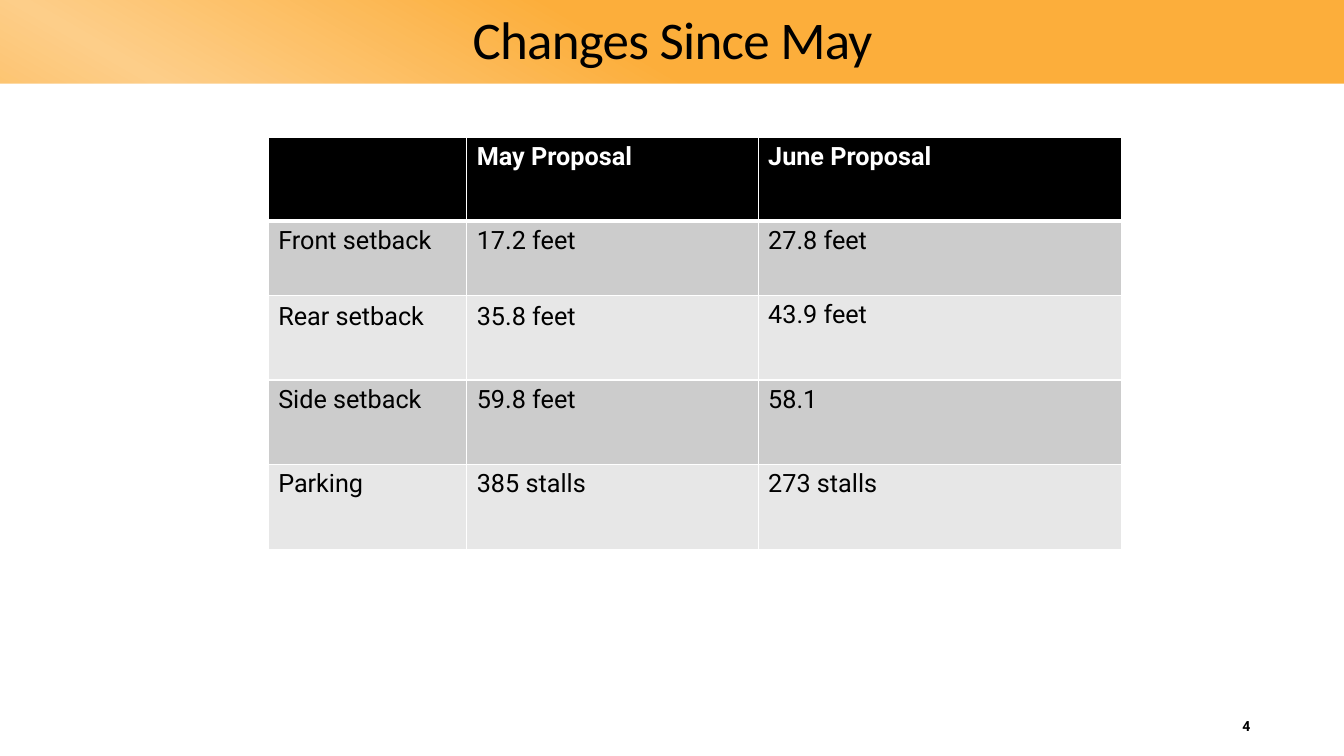
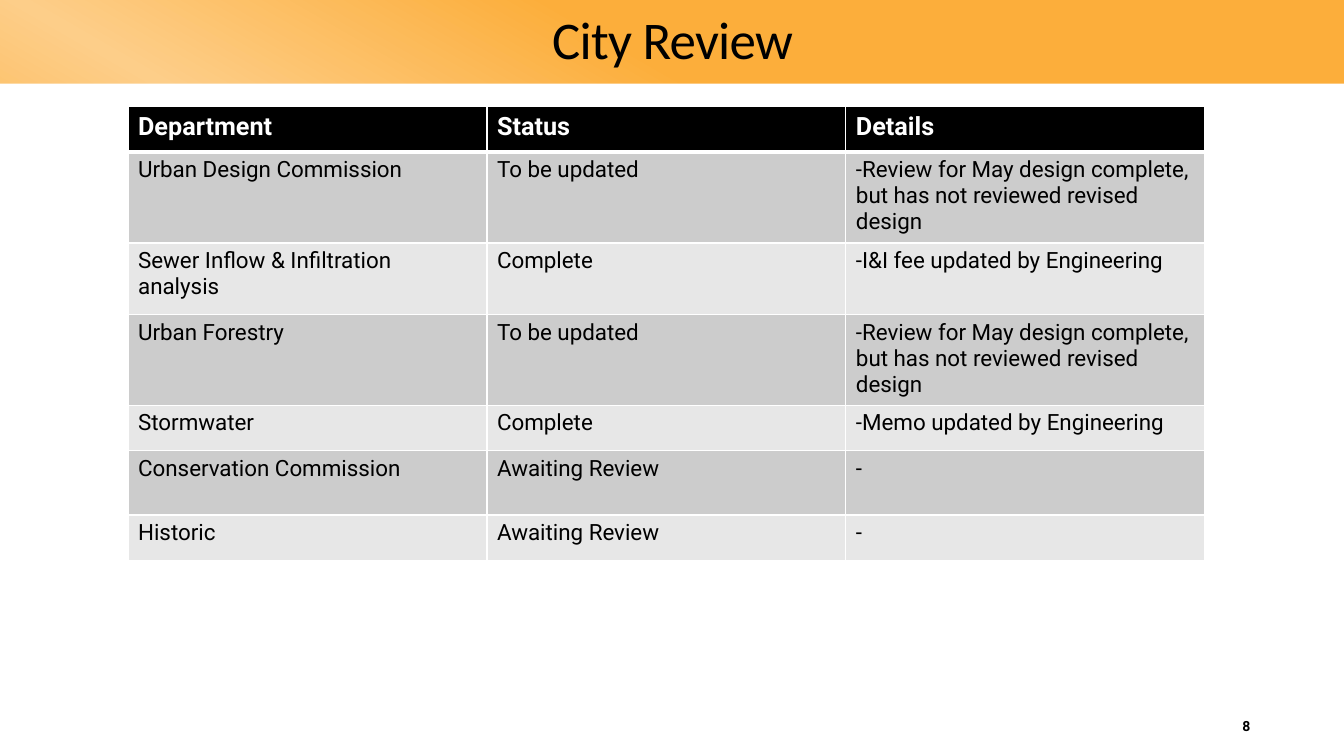
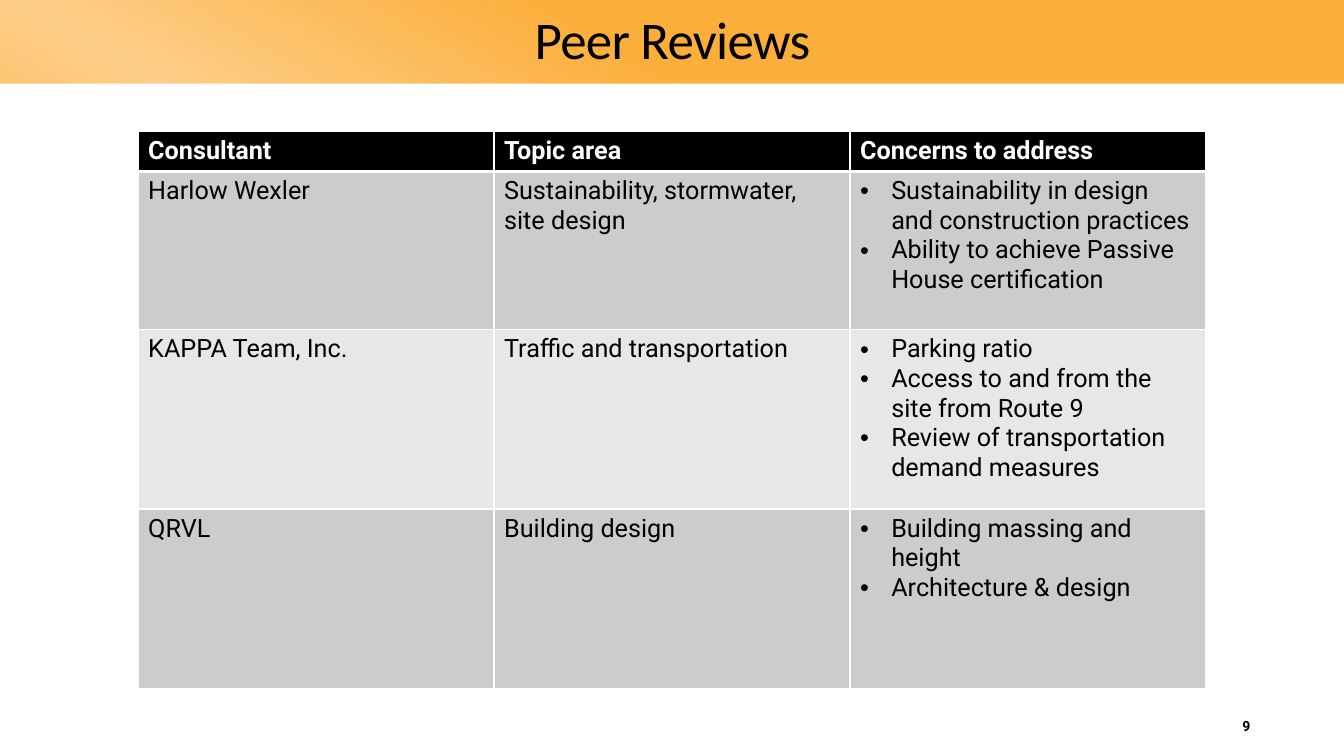
from lxml import etree
from pptx import Presentation
from pptx.dml.color import RGBColor
from pptx.enum.shapes import MSO_SHAPE
from pptx.enum.text import MSO_ANCHOR, PP_ALIGN
from pptx.oxml.ns import qn
from pptx.util import Inches, Pt

RECTANGLE = MSO_SHAPE.RECTANGLE
MIDDLE = MSO_ANCHOR.MIDDLE
LEFT, CENTER, RIGHT = PP_ALIGN.LEFT, PP_ALIGN.CENTER, PP_ALIGN.RIGHT

SLIDE_W, SLIDE_H, BAND_H = 13.33, 7.5, 0.83
BLACK, WHITE = "000000", "FFFFFF"
ORANGE, PALE_ORANGE = "FCAE3B", "FDCE89"
ROW_FILLS = ("CCCCCC", "E7E7E7")
BAND_STOPS = [(10, ORANGE), (30, ORANGE), (50, PALE_ORANGE), (70, ORANGE), (90, ORANGE)]
TITLE_FONT, BODY_FONT = "Calibri", "Roboto"
BULLET_INDENT = 0.31
LOOSE_CELLS = ("Rear setback", "35.8 feet")
MAY_REVIEW = "-Review for May design complete, but has not reviewed revised design"

SLIDES = [
    {
        "title": "Changes Since May", "number": "4", "size": 18,
        "corner": (2.66, 1.36),
        "columns": [1.97, 2.89, 3.6],
        "heights": [0.83, 0.74, 0.84, 0.84, 0.84],
        "rows": [
            ("", "May Proposal", "June Proposal"),
            ("Front setback", "17.2 feet", "27.8 feet"),
            ("Rear setback", "35.8 feet", "43.9 feet"),
            ("Side setback", "59.8 feet", "58.1"),
            ("Parking", "385 stalls", "273 stalls"),
        ],
    },
    {
        "title": "City Review", "number": "8", "size": 16,
        "corner": (1.27, 1.06),
        "columns": [3.56] * 3,
        "heights": [0.45, 0.9, 0.71, 0.88, 0.45, 0.64, 0.45],
        "rows": [
            ("Department", "Status", "Details"),
            ("Urban Design Commission", "To be updated", MAY_REVIEW),
            ("Sewer Inflow & Infiltration analysis", "Complete",
             "-I&I fee updated by Engineering"),
            ("Urban Forestry", "To be updated", MAY_REVIEW),
            ("Stormwater", "Complete", "-Memo updated by Engineering"),
            ("Conservation Commission", "Awaiting Review", "-"),
            ("Historic", "Awaiting Review", "-"),
        ],
    },
    {
        "title": "Peer Reviews", "number": "9", "size": 18,
        "corner": (1.37, 1.3),
        "columns": [3.53] * 3,
        "heights": [0.39, 1.57, 1.78, 1.78],
        "rows": [
            ("Consultant", "Topic area", "Concerns to address"),
            ("Harlow Wexler", "Sustainability, stormwater, site design",
             ["Sustainability in design and construction practices",
              "Ability to achieve Passive House certification"]),
            ("KAPPA Team, Inc.", "Traffic and transportation",
             ["Parking ratio",
              "Access to and from the site from Route 9",
              "Review of transportation demand measures"]),
            ("QRVL", "Building design",
             ["Building massing and height", "Architecture & design"]),
        ],
    },
]


def rgb(color):
    return RGBColor.from_string(color)


def write(frame, content, size=18, font=BODY_FONT, color=BLACK, bold=False,
          align=LEFT, line_spacing=None, space_after=None, tracking=None):
    bulleted = isinstance(content, list)
    frame.word_wrap = True
    for index, line in enumerate(content if bulleted else [content]):
        paragraph = frame.add_paragraph() if index else frame.paragraphs[0]
        paragraph.alignment = align
        if line_spacing:
            paragraph.line_spacing = line_spacing
        if space_after:
            paragraph.space_after = Pt(space_after)
        if bulleted:
            properties = paragraph._p.get_or_add_pPr()
            properties.set("marL", str(Inches(BULLET_INDENT)))
            properties.set("indent", str(-Inches(BULLET_INDENT)))
            etree.SubElement(properties, qn("a:buFont"), typeface="Arial")
            etree.SubElement(properties, qn("a:buChar"), char="•")
        run = paragraph.add_run()
        run.text = line
        run.font.size, run.font.name, run.font.bold = Pt(size), font, bold
        run.font.color.rgb = rgb(color)
        if tracking:
            run._r.get_or_add_rPr().set("spc", str(int(tracking * 100)))


def add_text(slide, box, content, **style):
    frame = slide.shapes.add_textbox(*map(Inches, box)).text_frame
    frame.vertical_anchor = MIDDLE
    write(frame, content, **style)


def add_panel(slide, top, height):
    panel = slide.shapes.add_shape(
        RECTANGLE, 0, Inches(top), Inches(SLIDE_W), Inches(height))
    panel.shadow.inherit = False
    panel.line.fill.background()
    return panel


def add_frame(slide, title, number):
    band = add_panel(slide, 0, SLIDE_H)
    band.fill.gradient()
    band.fill.gradient_angle = 240
    stops = band._element.spPr.find(qn("a:gradFill")).find(qn("a:gsLst"))
    stops.clear()
    for position, color in BAND_STOPS:
        stop = etree.SubElement(stops, qn("a:gs"), pos=str(position * 1000))
        etree.SubElement(stop, qn("a:srgbClr"), val=color)
    body = add_panel(slide, BAND_H, SLIDE_H - BAND_H)
    body.fill.solid()
    body.fill.fore_color.rgb = rgb(WHITE)
    add_text(slide, (1.83, 0.11, 9.68, 0.61), title, size=37.8, font=TITLE_FONT,
             align=CENTER, line_spacing=0.95, tracking=-0.5)
    add_text(slide, (11.92, 7, 0.58, 0.4), number, size=10, bold=True, align=RIGHT)


def set_borders(cell, **widths):
    properties = cell._tc.get_or_add_tcPr()
    for side in ("L", "R", "T", "B"):
        line = etree.SubElement(properties, qn("a:ln" + side),
                                w=str(Pt(widths.get(side, 1))))
        fill = etree.SubElement(line, qn("a:solidFill"))
        etree.SubElement(fill, qn("a:srgbClr"), val=WHITE)


def add_grid(slide, corner, columns, heights, rows, size):
    extent = (*corner, sum(columns), sum(heights))
    table = slide.shapes.add_table(
        len(rows), len(columns), *map(Inches, extent)).table
    table.horz_banding = False
    for column, width in zip(table.columns, columns):
        column.width = Inches(width)
    for r, (row, height) in enumerate(zip(rows, heights)):
        table.rows[r].height = Inches(height)
        for c, content in enumerate(row):
            cell = table.cell(r, c)
            if r == 0:
                set_borders(cell, B=3)
                fill, style = BLACK, {"size": 18, "color": WHITE, "bold": True}
            else:
                set_borders(cell, T=3 if r == 1 else 1)
                fill, style = ROW_FILLS[(r - 1) % 2], {"size": size}
            if content in LOOSE_CELLS:
                style.update(line_spacing=1.05, space_after=6)
            cell.fill.solid()
            cell.fill.fore_color.rgb = rgb(fill)
            write(cell.text_frame, content, **style)


def main():
    deck = Presentation()
    deck.slide_width, deck.slide_height = Inches(SLIDE_W), Inches(SLIDE_H)
    for page in SLIDES:
        slide = deck.slides.add_slide(deck.slide_layouts[6])
        add_frame(slide, page["title"], page["number"])
        add_grid(slide, page["corner"], page["columns"], page["heights"],
                 page["rows"], page["size"])
    deck.save("out.pptx")


if __name__ == "__main__":
    main()
